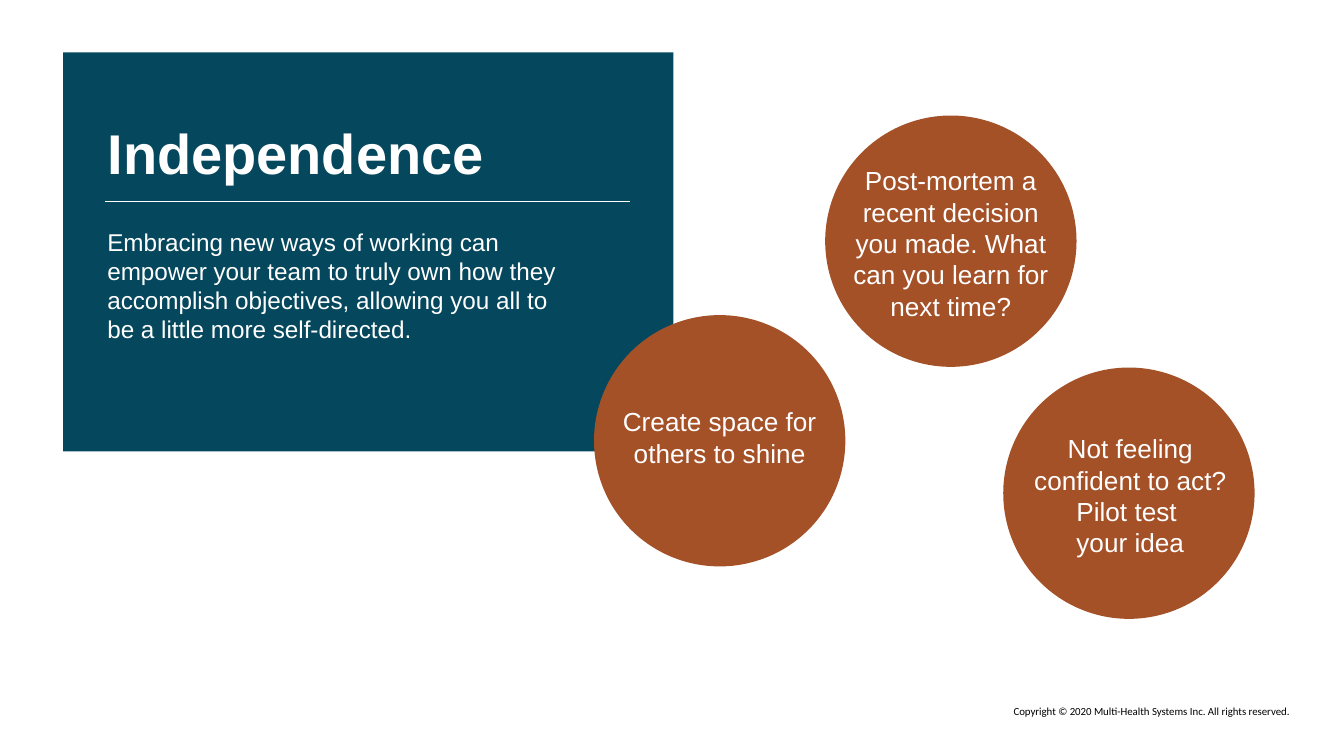
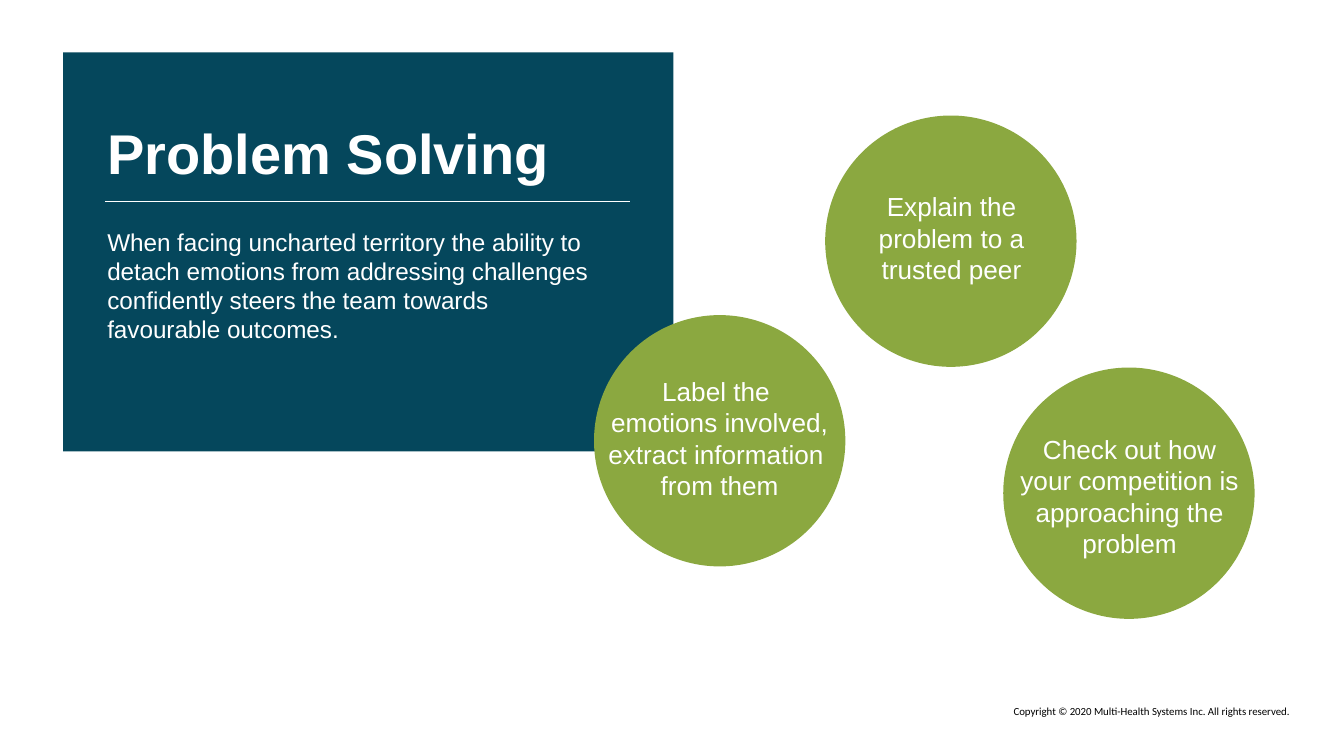
"""Build two strategy slides: a titled panel beside three tip circles."""
from pptx import Presentation
from pptx import util as u
from pptx.dml.color import RGBColor
from pptx.enum import shapes, text
from pptx.oxml import parse_xml
from pptx.oxml.ns import nsdecls

PX = 4572
COLORS = {"panel": "05475C", "rust": "A45128", "green": "8BA840",
          "white": "FFFFFF", "black": "000000"}
COPYRIGHT = "Copyright © 2020 Multi-Health Systems Inc. All rights reserved."
CIRCLE_SIZE = 374
CIRCLES = [(1228, 172), (884, 469), (1493, 547)]

SLIDES = [
    {
        "title": "Independence", "title_width": 922,
        "body": "Embracing new ways of working can empower your team to truly own "
                "how they accomplish objectives, allowing you all to be a little "
                "more self-directed.",
        "body_width": 718,
        "accent": "rust",
        "tips": [
            ((1494, 634, 376, 208),
             ["Not feeling confident to act? Pilot test \nyour idea"]),
            ((883, 594, 376, 114), ["Create space for others to shine"]),
            ((1243, 235, 344, 256),
             ["Post-mortem a recent decision you made. What can you learn for next time?"]),
        ],
    },
    {
        "title": "Problem Solving", "title_width": 812,
        "body": "When facing uncharted territory the ability to detach emotions from "
                "addressing challenges confidently steers the team towards favourable "
                "outcomes.",
        "body_width": 766,
        "accent": "green",
        "tips": [
            ((1493, 635, 376, 208),
             ["Check out how your competition is approaching the problem"]),
            ((883, 549, 376, 208),
             ["Label the \nemotions involved, extract information ", "from them"]),
            ((1244, 274, 344, 162), ["Explain the problem to a trusted peer"]),
        ],
    },
]


def px(*lengths):
    """Turn px lengths into EMU."""
    return [u.Emu(length * PX) for length in lengths]


def rgb(name):
    """Look up a named colour."""
    return RGBColor.from_string(COLORS[name])


def write(frame, paragraphs, size, align, color="white", font="Arial", bold=False):
    """Fill a text frame, turning newlines into line breaks."""
    frame.word_wrap = True
    for index, content in enumerate(paragraphs):
        paragraph = frame.add_paragraph() if index else frame.paragraphs[0]
        paragraph.alignment = align
        for line_index, line in enumerate(content.split("\n")):
            if line_index:
                paragraph.add_line_break()
            run = paragraph.add_run()
            run.text = line
            run.font.size = u.Pt(size)
            run.font.name = font
            run.font.bold = bold
            run.font.color.rgb = rgb(color)


def add_filled(slide, kind, box, color):
    """Add a plain filled shape without outline or shadow."""
    shape = slide.shapes.add_shape(kind, *px(*box))
    shape.shadow.inherit = False
    shape.fill.solid()
    shape.fill.fore_color.rgb = rgb(color)
    shape.line.fill.background()


def add_text(slide, box, paragraphs, size, align, **style):
    """Add a wrapped text box and return its frame."""
    frame = slide.shapes.add_textbox(*px(*box)).text_frame
    write(frame, paragraphs, size, align, **style)
    return frame


def add_rule(slide):
    """Add the thin line under the title."""
    rule = slide.shapes.add_connector(shapes.MSO_CONNECTOR.STRAIGHT,
                                      *px(156, 300, 938, 300))
    rule.line.color.rgb = rgb("white")
    rule.line.width = u.Pt(0.75)
    rule.element.spPr.append(parse_xml(f"<a:effectLst {nsdecls('a')}/>"))


def add_copyright(slide):
    """Add the raised copyright line at the bottom right."""
    frame = add_text(slide, (1406, 1036, 532, 42), [COPYRIGHT], 10,
                     text.PP_ALIGN.RIGHT, color="black", font="Calibri")
    frame.auto_size = text.MSO_AUTO_SIZE.SHAPE_TO_FIT_TEXT
    frame.paragraphs[0].runs[0].font._element.set("baseline", "30000")


def set_title(slide, title, width):
    """Place the title placeholder in front of the panel and format it."""
    shape = slide.shapes.title
    shape.element.getparent().append(shape.element)
    shape.left, shape.top, shape.width, shape.height = px(140, 156, width, 140)
    frame = shape.text_frame
    frame.auto_size = text.MSO_AUTO_SIZE.NONE
    frame.vertical_anchor = text.MSO_ANCHOR.MIDDLE
    write(frame, [title], 30, text.PP_ALIGN.LEFT, bold=True)


def add_strategy_slide(presentation, content):
    """Build one slide with its panel, title, body and tip circles."""
    slide = presentation.slides.add_slide(presentation.slide_layouts[5])
    add_filled(slide, shapes.MSO_SHAPE.RECTANGLE, (94, 78, 908, 594), "panel")
    add_copyright(slide)
    add_rule(slide)
    set_title(slide, content["title"], content["title_width"])
    add_text(slide, (140, 328, content["body_width"], 328), [content["body"]], 13,
             text.PP_ALIGN.LEFT)
    for left, top in CIRCLES:
        add_filled(slide, shapes.MSO_SHAPE.OVAL,
                   (left, top, CIRCLE_SIZE, CIRCLE_SIZE), content["accent"])
    for box, paragraphs in content["tips"]:
        frame = add_text(slide, box, paragraphs, 14, text.PP_ALIGN.CENTER)
        frame.auto_size = text.MSO_AUTO_SIZE.SHAPE_TO_FIT_TEXT


def main():
    """Create the presentation and save it."""
    presentation = Presentation()
    presentation.slide_width, presentation.slide_height = px(2000, 1125)
    for content in SLIDES:
        add_strategy_slide(presentation, content)
    presentation.save("out.pptx")


if __name__ == "__main__":
    main()
